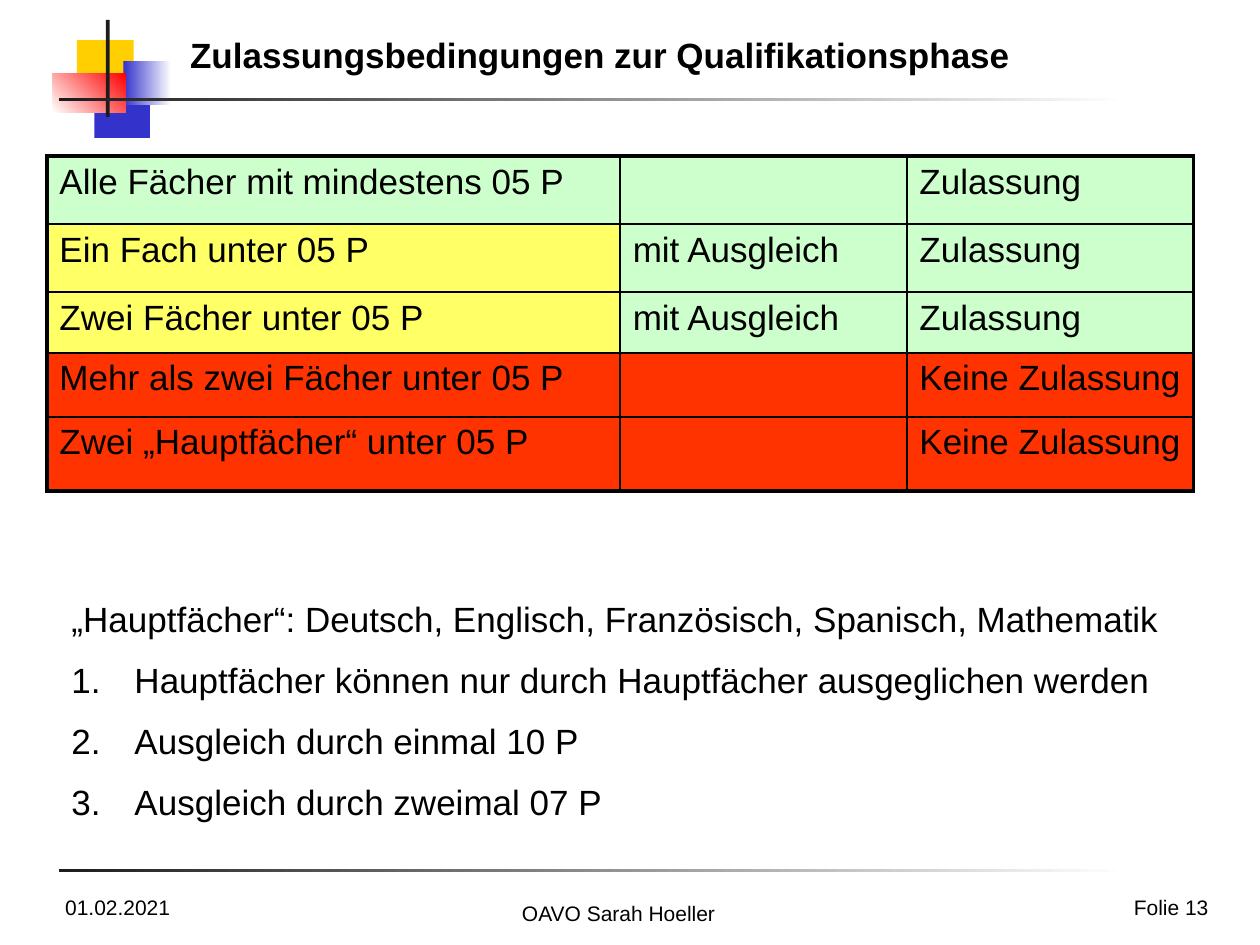
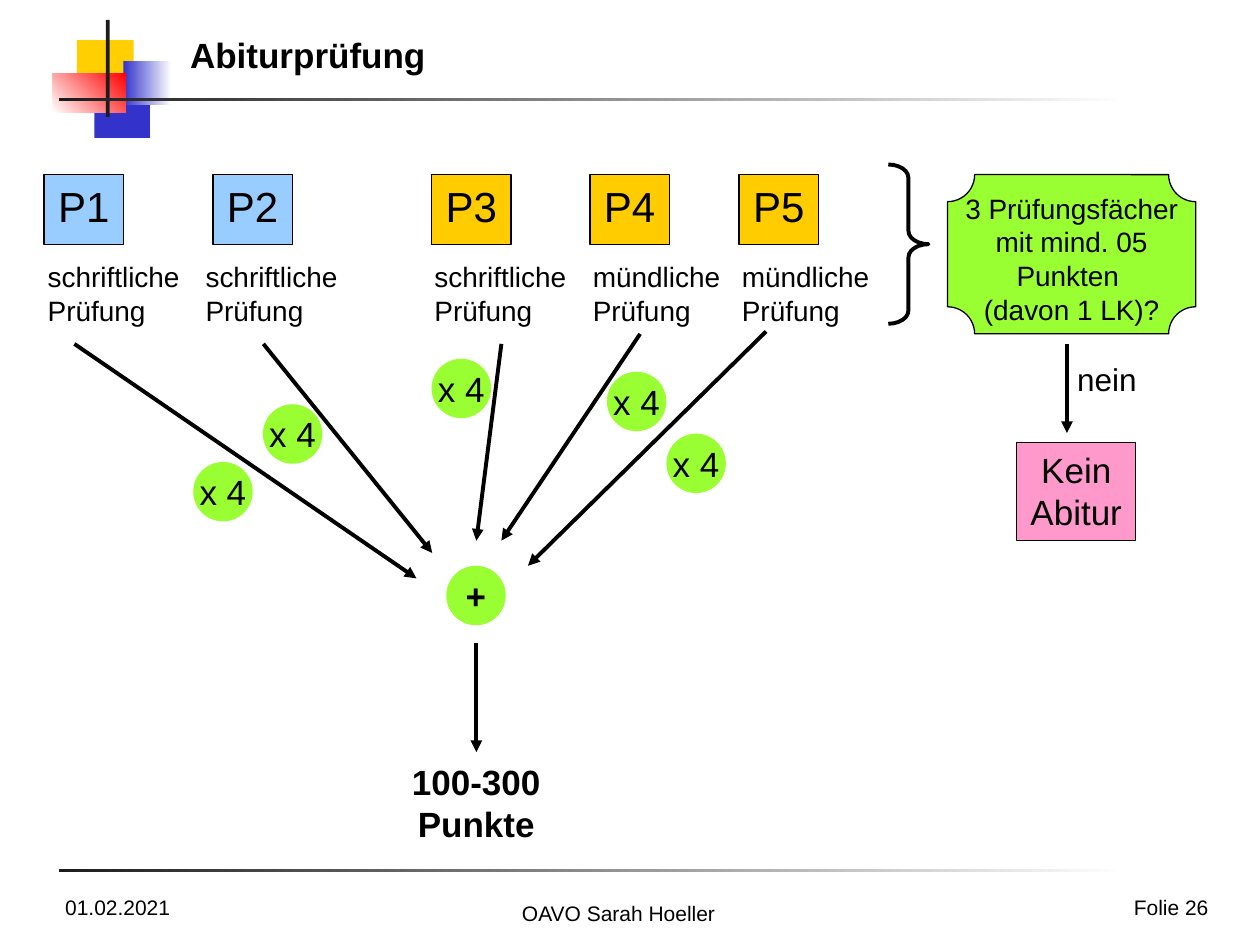
import dataclasses

import pptx
import pptx.dml.color
import pptx.enum.shapes
import pptx.enum.text
import pptx.oxml
import pptx.oxml.ns
import pptx.util

Pt = pptx.util.Pt
SHAPES = pptx.enum.shapes.MSO_SHAPE
ALIGN = pptx.enum.text.PP_ALIGN
ANCHOR = pptx.enum.text.MSO_ANCHOR


@dataclasses.dataclass(frozen=True)
class Theme:
    font: str = "Arial"
    black: str = "000000"
    white: str = "FFFFFF"
    rule: str = "1C1C1C"
    gold: str = "FFCF01"
    blue: str = "3333CC"
    red: str = "FF0000"
    passed: str = "CCFFCC"
    balanced: str = "FFFF66"
    failed: str = "FF3300"
    written: str = "99CCFF"
    oral: str = "FFCC00"
    lime: str = "99FF33"
    pink: str = "FF99CC"
    footer_size: int = 12
    label_size: int = 16
    note_size: int = 18
    body_size: int = 20
    box_size: int = 24
    thin: float = 0.75
    grid: float = 1
    thick: float = 2.25


THEME = Theme()


def rgb(value):
    return pptx.dml.color.RGBColor.from_string(value)


def place(box):
    return [Pt(length) for length in box]


def format_paragraph(paragraph, size, bold=False, align=ALIGN.LEFT):
    paragraph.alignment = align
    for run in paragraph.runs:
        run.font.name = THEME.font
        run.font.size = Pt(size)
        run.font.bold = bold
        run.font.color.rgb = rgb(THEME.black)


def write(shape, text, size, bold=False, align=ALIGN.LEFT, anchor=ANCHOR.TOP, wrap=True):
    frame = shape.text_frame
    frame.word_wrap = wrap
    frame.vertical_anchor = anchor
    frame.text = text
    for paragraph in frame.paragraphs:
        format_paragraph(paragraph, size, bold, align)


def add_text(slide, box, text, size, **style):
    shape = slide.shapes.add_textbox(*place(box))
    write(shape, text, size, **style)
    return shape


def add_shape(slide, kind, box, fill=None, line_width=None):
    shape = slide.shapes.add_shape(kind, *place(box))
    shape.shadow.inherit = False
    if fill:
        shape.fill.solid()
        shape.fill.fore_color.rgb = rgb(fill)
    else:
        shape.fill.background()
    if line_width:
        shape.line.color.rgb = rgb(THEME.black)
        shape.line.width = Pt(line_width)
    else:
        shape.line.fill.background()
    return shape


def add_gradient(slide, box, start, end, angle=0):
    shape = add_shape(slide, SHAPES.RECTANGLE, box)
    shape.fill.gradient()
    shape.fill.gradient_angle = angle
    for stop, color in zip(shape.fill.gradient_stops, (start, end)):
        stop.color.rgb = rgb(color)


def add_box(slide, box, text, fill, size, wrap=False):
    shape = add_shape(slide, SHAPES.RECTANGLE, box, fill, THEME.thin)
    write(shape, text, size, align=ALIGN.CENTER, wrap=wrap)


def add_circle(slide, left, top, text, bold=False):
    shape = add_shape(slide, SHAPES.OVAL, (left, top, 34, 34), THEME.lime)
    write(shape, text, THEME.body_size, bold, ALIGN.CENTER, ANCHOR.MIDDLE, False)


def add_arrow(slide, start, end):
    connector = slide.shapes.add_connector(
        pptx.enum.shapes.MSO_CONNECTOR.STRAIGHT, *place(start + end))
    connector.line.color.rgb = rgb(THEME.black)
    connector.line.width = Pt(THEME.thick)
    properties = connector.element.spPr
    line = properties.find(pptx.oxml.ns.qn("a:ln"))
    line.append(pptx.oxml.parse_xml(
        f'<a:tailEnd {pptx.oxml.ns.nsdecls("a")} type="triangle"/>'))
    properties.append(pptx.oxml.parse_xml(
        f'<a:effectLst {pptx.oxml.ns.nsdecls("a")}/>'))


def add_border(cell, side, width):
    cell._tc.get_or_add_tcPr().append(pptx.oxml.parse_xml(
        f'<a:ln{side} {pptx.oxml.ns.nsdecls("a")} w="{Pt(width)}"><a:solidFill>'
        f'<a:srgbClr val="{THEME.black}"/></a:solidFill></a:ln{side}>'))


def add_table(slide, left, top, widths, heights, rows):
    box = (left, top, sum(widths), sum(heights))
    table = slide.shapes.add_table(len(heights), len(widths), *place(box)).table
    table.first_row = False
    table.horz_banding = False
    for column, width in zip(table.columns, widths):
        column.width = Pt(width)
    for row, height in zip(table.rows, heights):
        row.height = Pt(height)
    last_row, last_column = len(heights) - 1, len(widths) - 1
    for row_index, row in enumerate(rows):
        for column_index, (text, fill) in enumerate(row):
            cell = table.cell(row_index, column_index)
            outer = {"L": column_index == 0, "R": column_index == last_column,
                     "T": row_index == 0, "B": row_index == last_row}
            for side, is_outer in outer.items():
                add_border(cell, side, THEME.thick if is_outer else THEME.grid)
            cell.fill.solid()
            cell.fill.fore_color.rgb = rgb(fill)
            cell.text = text
            format_paragraph(cell.text_frame.paragraphs[0], THEME.body_size)


def add_numbered_notes(slide, box, heading, notes):
    shape = add_text(slide, box, "\n".join([heading] + notes), THEME.body_size)
    for paragraph in shape.text_frame.paragraphs[1:]:
        properties = paragraph._p.get_or_add_pPr()
        properties.set("marL", str(Pt(36)))
        properties.set("indent", str(-Pt(36)))
        properties.append(pptx.oxml.parse_xml(
            f'<a:buAutoNum {pptx.oxml.ns.nsdecls("a")} type="arabicPeriod"/>'))
        paragraph.space_before = Pt(11)


def add_emblem(slide):
    add_shape(slide, SHAPES.RECTANGLE, (44, 23, 32.4, 25.2), THEME.gold)
    add_gradient(slide, (61.2, 51.8, 24.5, 25.2), THEME.gold, THEME.white)
    add_shape(slide, SHAPES.RECTANGLE, (54, 53.6, 31.7, 25.2), THEME.blue)
    add_gradient(slide, (70.5, 34.8, 27.4, 25.2), THEME.blue, THEME.white)
    add_gradient(slide, (30.2, 41.8, 41.8, 22.6), THEME.white, THEME.red, 45)
    add_shape(slide, SHAPES.RECTANGLE, (60.5, 11.4, 2.2, 55.4), THEME.rule)


def add_framed_slide(presentation, title, number):
    slide = presentation.slides.add_slide(presentation.slide_layouts[6])
    add_emblem(slide)
    for top in (56, 496.6):
        add_gradient(slide, (33.8, top, 610, 1.7), THEME.rule, THEME.white)
    add_text(slide, (530, 507.6, 167.7, 16), f"Folie {number}",
             THEME.footer_size, align=ALIGN.RIGHT)
    add_text(slide, (30.2, 507.6, 167.7, 21.6), "01.02.2021", THEME.footer_size)
    add_text(slide, (239.5, 511.2, 228, 17.3), "OAVO Sarah Hoeller",
             THEME.footer_size, align=ALIGN.CENTER)
    add_text(slide, (101.5, 22.3, 517.7, 24.5), title, THEME.body_size,
             bold=True, anchor=ANCHOR.BOTTOM)
    return slide


def build_admission(presentation):
    slide = add_framed_slide(
        presentation, "Zulassungsbedingungen zur Qualifikationsphase", 13)
    passed, balanced, failed = THEME.passed, THEME.balanced, THEME.failed
    conditions = [
        ("Alle Fächer mit mindestens 05 P", passed, "", "Zulassung", passed),
        ("Ein Fach unter 05 P", balanced, "mit Ausgleich", "Zulassung", passed),
        ("Zwei Fächer unter 05 P", balanced, "mit Ausgleich", "Zulassung", passed),
        ("Mehr als zwei Fächer unter 05 P", failed, "", "Keine Zulassung", failed),
        ("Zwei „Hauptfächer“ unter 05 P", failed, "", "Keine Zulassung", failed),
    ]
    rows = [[(grades, grade_fill), (balance, fill), (result, fill)]
            for grades, grade_fill, balance, result, fill in conditions]
    add_table(slide, 26.8, 89.2, (327.6, 163.8, 163.8),
              (38.9, 38.9, 34.7, 36.6, 42.4), rows)
    add_numbered_notes(
        slide, (33.8, 337.7, 656, 139),
        "„Hauptfächer“: Deutsch, Englisch, Französisch, Spanisch, Mathematik",
        ["Hauptfächer können nur durch Hauptfächer ausgeglichen werden",
         "Ausgleich durch einmal 10 P",
         "Ausgleich durch zweimal 07 P"])


def build_exam(presentation):
    slide = add_framed_slide(presentation, "Abiturprüfung", 26)
    exams = [
        ("P1", 25.2, 20.2, THEME.written, "schriftliche",
         (42.5, 196.5), (238, 330.5), (110.4, 264)),
        ("P2", 121.7, 110.4, THEME.written, "schriftliche",
         (150.5, 196.5), (247, 316), (150.2, 231)),
        ("P3", 246.6, 241.2, THEME.oral, "schriftliche",
         (286.5, 196.5), (272.2, 309), (246.6, 205)),
        ("P4", 337.1, 331.7, THEME.oral, "mündliche",
         (365.8, 190.8), (286.5, 309), (346.8, 212.4)),
        ("P5", 422.4, 416.9, THEME.oral, "mündliche",
         (437.8, 189.4), (301.7, 323.3), (380.8, 247.8)),
    ]
    for name, box_left, label_left, fill, mode, start, end, factor in exams:
        add_box(slide, (box_left, 99.8, 45.4, 40), name, fill, THEME.box_size)
        add_text(slide, (label_left, 144.7, 113, 46), f"{mode} Prüfung",
                 THEME.label_size)
        add_arrow(slide, start, end)
    for exam in exams:
        add_circle(slide, *exam[-1], "x 4")

    add_circle(slide, 255, 323.3, "+", bold=True)
    add_arrow(slide, (272.2, 367.2), (272.2, 429.8))
    add_text(slide, (223.9, 431.3, 96.5, 55.4), "100-300 Punkte",
             THEME.body_size, bold=True, align=ALIGN.CENTER)

    brace = add_shape(slide, SHAPES.LEFT_BRACE, (507.6, 94, 23, 91),
                      line_width=THEME.thick)
    brace.rotation = 180
    brace.adjustments[0] = 0.33
    plaque = add_shape(slide, SHAPES.PLAQUE, (541.5, 99.8, 141.8, 91),
                       THEME.lime, THEME.thin)
    plaque.adjustments[0] = 0.17
    add_text(slide, (535.7, 105.8, 153.4, 84.2),
             "3 Prüfungsfächer mit mind. 05 Punkten \v(davon 1 LK)?",
             THEME.label_size, align=ALIGN.CENTER)
    add_arrow(slide, (609.7, 196.5), (609.7, 247.5))
    add_text(slide, (604, 202.3, 57, 28.8), "nein", THEME.note_size,
             align=ALIGN.CENTER)
    add_box(slide, (581, 252.8, 68, 56), "Kein Abitur", THEME.pink,
            THEME.body_size, wrap=True)


def main():
    presentation = pptx.Presentation()
    presentation.slide_width = Pt(720)
    presentation.slide_height = Pt(540)
    build_admission(presentation)
    build_exam(presentation)
    presentation.save("out.pptx")


if __name__ == "__main__":
    main()
